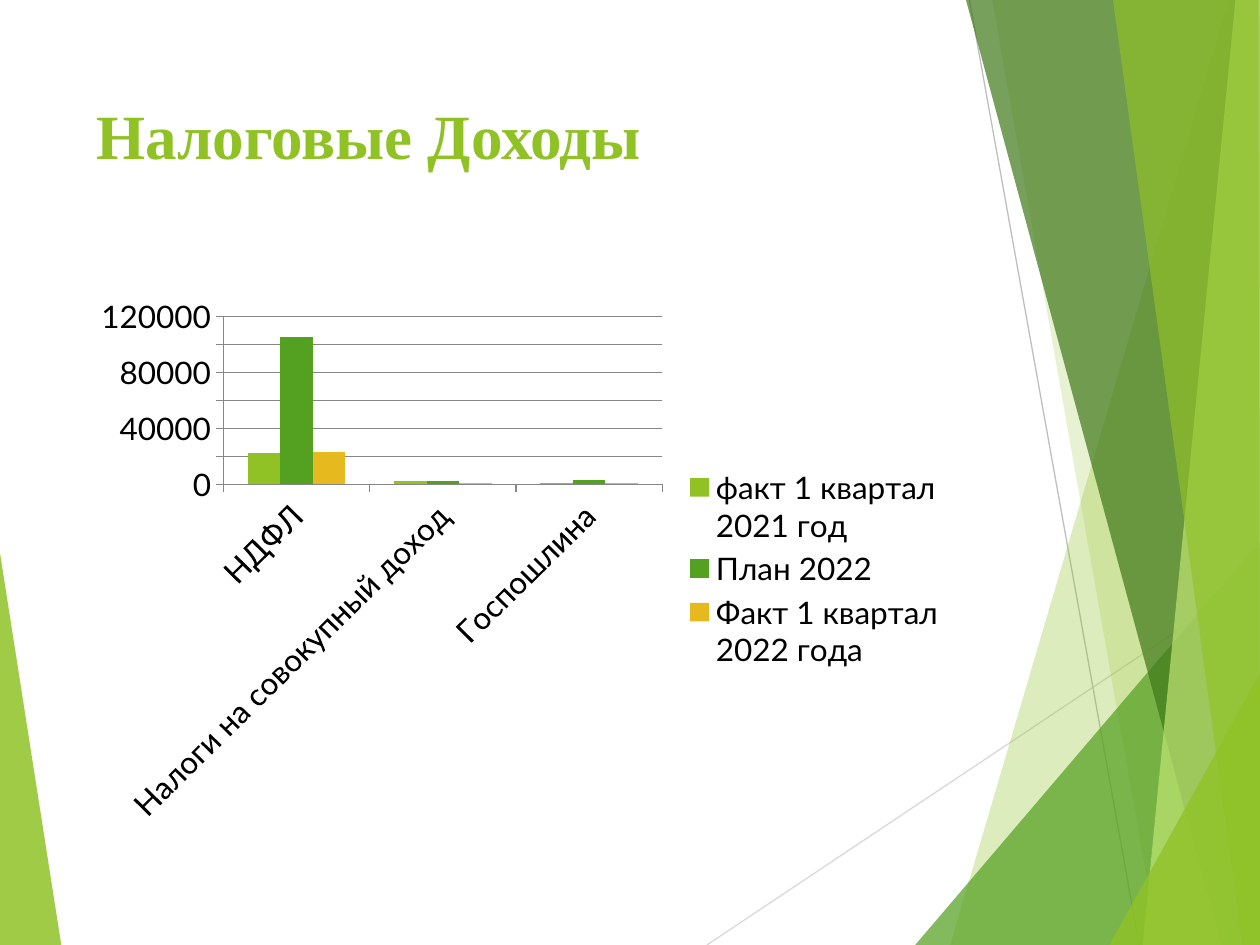
"""Builds the tax revenue slide with its column chart."""
from lxml import etree
from pptx import Presentation
from pptx.chart.data import CategoryChartData
from pptx.dml.color import RGBColor
from pptx.enum.chart import XL_CHART_TYPE, XL_LEGEND_POSITION, XL_TICK_MARK
from pptx.enum.text import MSO_ANCHOR
from pptx.oxml.ns import qn
from pptx.util import Pt

COLUMN = XL_CHART_TYPE.COLUMN_CLUSTERED
RIGHT = XL_LEGEND_POSITION.RIGHT
OUT = XL_TICK_MARK.OUTSIDE
TOP = MSO_ANCHOR.TOP

WIDE, HIGH = 720, 540
LIME, GREEN, GOLD = "90C226", "54A021", "E6B91E"
TITLE = "Налоговые Доходы"
CATS = ["НДФЛ", "Налоги на совокупный доход", "Госпошлина"]
SERIES = [
    ("факт 1 квартал 2021 год", (22000, 2000, 1000), LIME),
    ("План 2022", (105000, 2000, 3000), GREEN),
    ("Факт 1 квартал 2022 года", (23000, 1000, 1000), GOLD),
]
LEFT_SHARD = (LIME, 85, [(0, 316), (35, HIGH), (0, HIGH)])
RAYS = [
    ((404, HIGH), (WIDE, 329), "D9D9D9"),
    ((554, 0), (651, HIGH), "BFBFBF"),
]
SHARDS = [
    (LIME, 30, [(702, 0), (543, HIGH), (WIDE, HIGH), (WIDE, 0)]),
    (LIME, 20, [(567, 0), (662, HIGH), (WIDE, HIGH), (WIDE, 0)]),
    (GREEN, 72, [(523, HIGH), (WIDE, 309), (WIDE, HIGH)]),
    ("3F7819", 70, [(552, 0), (698, HIGH), (WIDE, HIGH), (WIDE, 0)]),
    ("C0E474", 70, [(706, 0), (653, HIGH), (WIDE, HIGH), (WIDE, 0)]),
    (LIME, 65, [(636, 0), (710, HIGH), (WIDE, HIGH), (719, 0)]),
    (LIME, 80, [(634, HIGH), (WIDE, 385), (WIDE, HIGH)]),
]


def tint(code):
    return RGBColor.from_string(code)


def add_shard(slide, code, solid, spots):
    pen = slide.shapes.build_freeform(*spots[0], scale=Pt(1))
    pen.add_line_segments(spots[1:], close=True)
    shard = pen.convert_to_shape()
    shard.shadow.inherit = False
    shard.line.fill.background()
    shard.fill.solid()
    shard.fill.fore_color.rgb = tint(code)
    paint = shard.fill._xPr.find(qn("a:solidFill"))[0]
    etree.SubElement(paint, qn("a:alpha")).set("val", str(solid * 1000))


def add_ray(slide, start, end, code):
    ray = slide.shapes.add_connector(1, *map(Pt, start + end))
    ray.line.color.rgb = tint(code)
    ray.line.width = Pt(0.75)
    etree.SubElement(ray._element.spPr, qn("a:effectLst"))


def add_title(slide):
    frame = slide.shapes.add_textbox(Pt(48), Pt(48), Pt(500), Pt(104)).text_frame
    frame.word_wrap = True
    frame.vertical_anchor = TOP
    frame.margin_top = Pt(7)
    frame.text = TITLE
    font = frame.paragraphs[0].runs[0].font
    font.name, font.size, font.bold = "Times New Roman", Pt(36), True
    font.color.rgb = tint(LIME)


def add_graph(slide):
    data = CategoryChartData()
    data.categories = CATS
    for name, vals, _ in SERIES:
        data.add_series(name, vals)
    box = map(Pt, (48, 170, 500, 305))
    chart = slide.shapes.add_chart(COLUMN, *box, data).chart
    chart.has_title = False
    chart.font.name, chart.font.size = "Lato", Pt(18)
    chart.font.color.rgb = tint("000000")
    chart.has_legend = True
    chart.legend.position = RIGHT
    chart.legend.include_in_layout = False
    plot = chart.plots[0]
    plot.gap_width, plot.overlap = 150, 0
    plot.vary_by_categories = False
    for bar, (_, _, code) in zip(plot.series, SERIES):
        bar.format.fill.solid()
        bar.format.fill.fore_color.rgb = tint(code)
    grid = chart.value_axis.major_gridlines
    for part in (chart.category_axis, chart.value_axis, grid):
        part.format.line.color.rgb = tint("878787")
        part.format.line.width = Pt(0.75)
    for axis in (chart.category_axis, chart.value_axis):
        axis.major_tick_mark = OUT
        axis.tick_labels.font.size = Pt(18)
    turn = chart.category_axis._element.find(qn("c:txPr")).find(qn("a:bodyPr"))
    turn.set("rot", str(-45 * 60000))
    chart.value_axis.minimum_scale = 0
    chart.value_axis.maximum_scale = 120000
    chart.value_axis.major_unit = 20000


def main():
    deck = Presentation()
    deck.slide_width, deck.slide_height = Pt(WIDE), Pt(HIGH)
    slide = deck.slides.add_slide(deck.slide_layouts[6])
    add_shard(slide, *LEFT_SHARD)
    for ray in RAYS:
        add_ray(slide, *ray)
    for shard in SHARDS:
        add_shard(slide, *shard)
    add_title(slide)
    add_graph(slide)
    deck.save("out.pptx")


if __name__ == "__main__":
    main()
